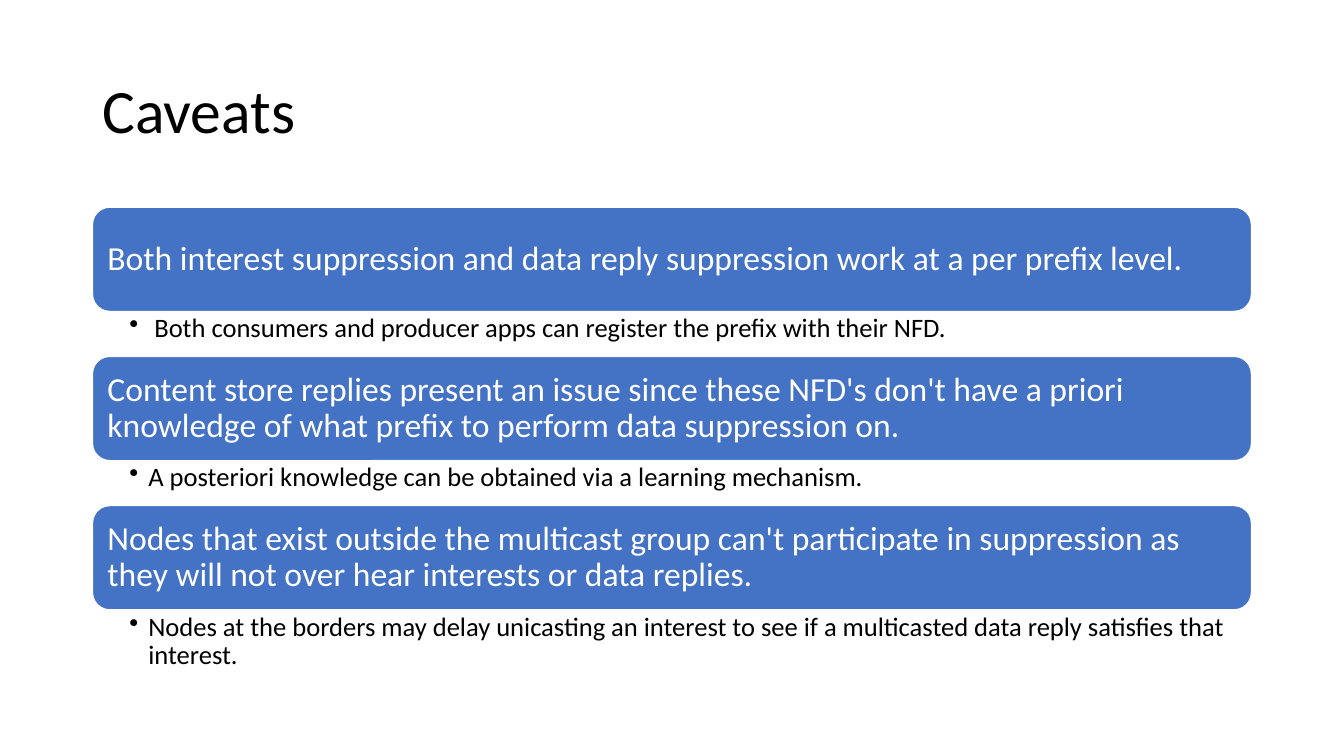
from lxml import etree
from pptx import Presentation
from pptx.dml.color import RGBColor
from pptx.enum.shapes import MSO_SHAPE
from pptx.enum.text import MSO_ANCHOR, PP_ALIGN
from pptx.oxml.ns import qn
from pptx.util import Cm, Pt

ROUND = MSO_SHAPE.ROUNDED_RECTANGLE
MIDDLE, TOP = MSO_ANCHOR.MIDDLE, MSO_ANCHOR.TOP
LEFT = PP_ALIGN.LEFT

COLORS = {"bar": "4472C4", "light": "FFFFFF", "dark": "000000"}
# margins in cm: left, top, right, bottom
STYLES = {
    "title": {"size": 44, "color": "dark", "anchor": MIDDLE,
              "margins": (0.25, 0.13, 0.25, 0.13)},
    "bar": {"size": 24, "color": "light", "anchor": MIDDLE,
            "margins": (0.25, 0.25, 0.25, 0.25)},
    "note": {"size": 19, "color": "dark", "anchor": TOP,
             "margins": (0.93, 0.08, 0.48, 0.08)},
}
SIDES = ("margin_left", "margin_top", "margin_right", "margin_bottom")

CAVEATS = [
    ("Both interest suppression and data reply suppression work at a per prefix level.",
     " Both consumers and producer apps can register the prefix with their NFD.", 1.1),
    ("Content store replies present an issue since these NFD's don't have a priori "
     "knowledge of what prefix to perform data suppression on.",
     "A posteriori knowledge can be obtained via a learning mechanism.", 1.1),
    ("Nodes that exist outside the multicast group can't participate in suppression "
     "as they will not over hear interests or data replies.",
     "Nodes at the borders may delay unicasting an interest to see if a multicasted "
     "data reply satisfies that interest.", 1.65),
]
X, WIDTH = Cm(2.33), Cm(29.21)
START, STEP, BAR = 5.22, 3.76, 2.63


def write(shape, text, name):
    """Put one styled paragraph in the shape and return it."""
    style = STYLES[name]
    frame = shape.text_frame
    frame.word_wrap = True
    frame.vertical_anchor = style["anchor"]
    for side, gap in zip(SIDES, style["margins"]):
        setattr(frame, side, Cm(gap))
    para = frame.paragraphs[0]
    para.alignment = LEFT
    para.line_spacing = 0.9
    run = para.add_run()
    run.text = text
    run.font.name = "Calibri"
    run.font.size = Pt(style["size"])
    run.font.color.rgb = RGBColor.from_string(COLORS[style["color"]])
    return para


def add_bullet(para, indent):
    props = para._p.get_or_add_pPr()
    props.set("marL", str(indent))
    props.set("indent", str(-indent))
    etree.SubElement(props, qn("a:buChar")).set("char", "•")


deck = Presentation()
deck.slide_width, deck.slide_height = Cm(33.87), Cm(19.05)
slide = deck.slides.add_slide(deck.slide_layouts[6])
shapes = slide.shapes

title = shapes.add_textbox(X, Cm(1.01), WIDTH, Cm(3.68))
write(title, "Caveats", "title")

for row, (claim, detail, height) in enumerate(CAVEATS):
    top = START + row * STEP
    bar = shapes.add_shape(ROUND, X, Cm(top), WIDTH, Cm(BAR))
    bar.shadow.inherit = False
    bar.fill.solid()
    bar.fill.fore_color.rgb = RGBColor.from_string(COLORS["bar"])
    bar.line.color.rgb = RGBColor.from_string(COLORS["light"])
    bar.line.width = Pt(1)
    write(bar, claim, "bar")

    note = shapes.add_textbox(X, Cm(top + BAR), WIDTH, Cm(height))
    add_bullet(write(note, detail, "note"), Cm(0.48))

deck.save("out.pptx")
